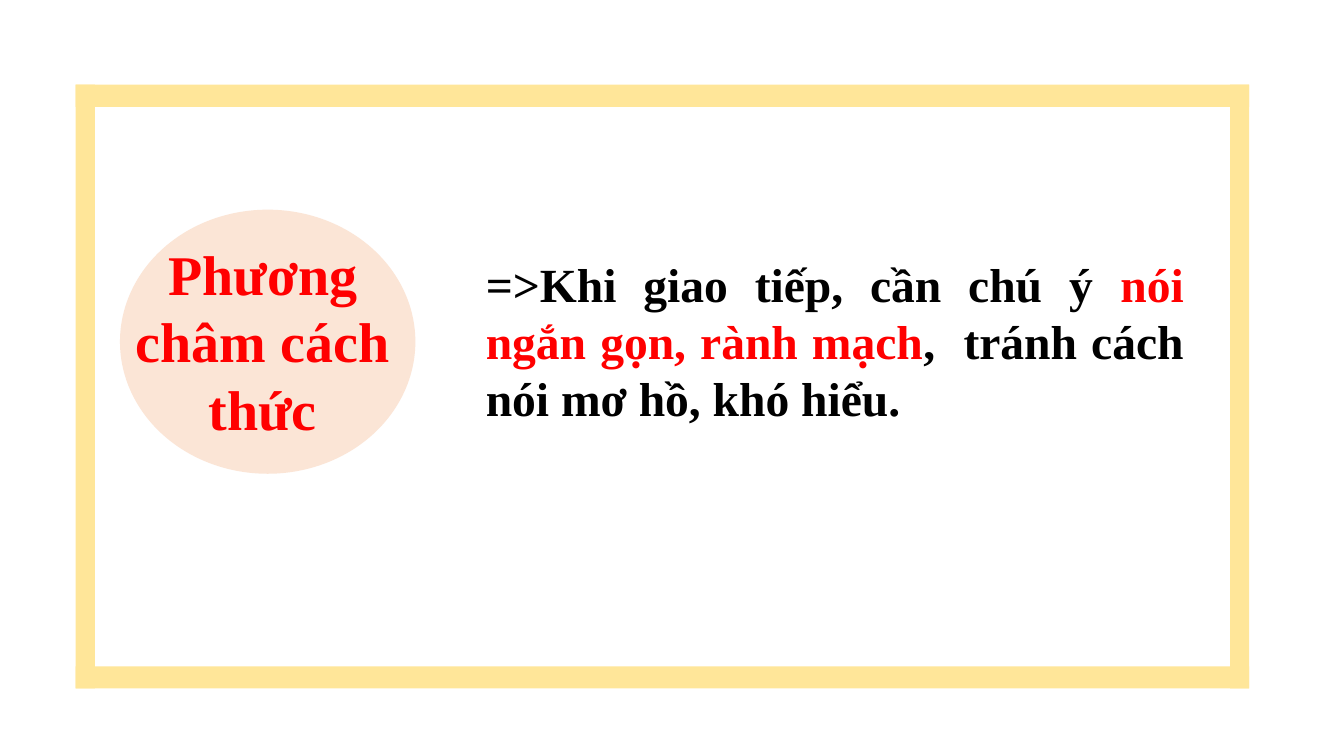
from pptx import Presentation
from pptx.dml.color import RGBColor
from pptx.enum.shapes import MSO_SHAPE
from pptx.enum.text import PP_ALIGN
from pptx.util import Inches, Pt

RECTANGLE = MSO_SHAPE.RECTANGLE
OVAL = MSO_SHAPE.OVAL
CENTER = PP_ALIGN.CENTER
JUSTIFY = PP_ALIGN.JUSTIFY

FONT = "Times New Roman"
YELLOW = "FFE699"
PEACH = "FBE5D6"
RED = "FF0000"
BLACK = "000000"


def color(hex_string):
    return RGBColor.from_string(hex_string)


def add_filled_shape(slide, kind, left, top, width, height, fill):
    shape = slide.shapes.add_shape(
        kind, Inches(left), Inches(top), Inches(width), Inches(height))
    shape.shadow.inherit = False
    shape.fill.solid()
    shape.fill.fore_color.rgb = color(fill)
    shape.line.fill.background()


def add_text(slide, left, top, width, height, parts, size, alignment):
    """Add one paragraph made of (text, colour) parts."""
    box = slide.shapes.add_textbox(
        Inches(left), Inches(top), Inches(width), Inches(height))
    box.text_frame.word_wrap = True
    paragraph = box.text_frame.paragraphs[0]
    paragraph.alignment = alignment
    for text, hex_string in parts:
        run = paragraph.add_run()
        run.text = text
        run.font.name = FONT
        run.font.size = Pt(size)
        run.font.bold = True
        run.font.color.rgb = color(hex_string)


def add_frame(slide, left, top, width, height):
    bar_height, bar_width = 0.22, 0.19
    # Horizontal bars
    for bar_top in (top, top + height - bar_height):
        add_filled_shape(slide, RECTANGLE, left, bar_top, width, bar_height, YELLOW)
    # Vertical bars
    for bar_left in (left, left + width - bar_width):
        add_filled_shape(slide, RECTANGLE, bar_left, top, bar_width, height, YELLOW)


def add_topic(slide, left, top, width, height):
    add_filled_shape(slide, OVAL, left, top, width, height, PEACH)
    add_text(slide, left, top + 0.25, width - 0.1, height - 0.5,
             [("Phương châm cách thức", RED)], 40, CENTER)


def add_conclusion(slide, left, top, width, height):
    parts = [
        ("=>Khi giao tiếp, cần chú ý ", BLACK),
        ("nói ngắn gọn, rành mạch", RED),
        (",  tránh cách nói mơ hồ, khó hiểu.", BLACK),
    ]
    add_text(slide, left, top, width, height, parts, 34, JUSTIFY)


def main():
    presentation = Presentation()
    presentation.slide_width = Inches(13.33)
    presentation.slide_height = Inches(7.5)
    slide = presentation.slides.add_slide(presentation.slide_layouts[6])
    add_frame(slide, 0.75, 0.84, 11.64, 5.99)
    add_conclusion(slide, 4.72, 2.48, 7.12, 1.82)
    add_topic(slide, 1.19, 2.08, 2.93, 2.62)
    presentation.save("out.pptx")


if __name__ == "__main__":
    main()
